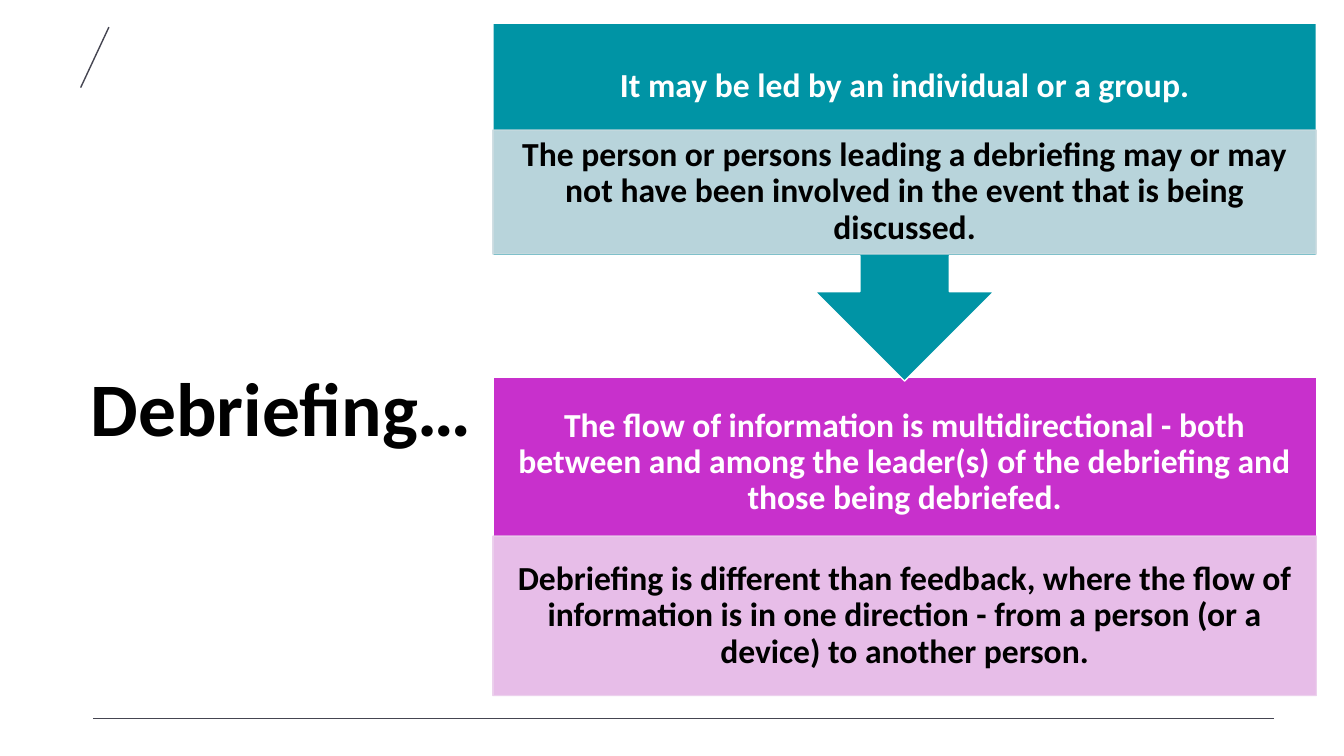
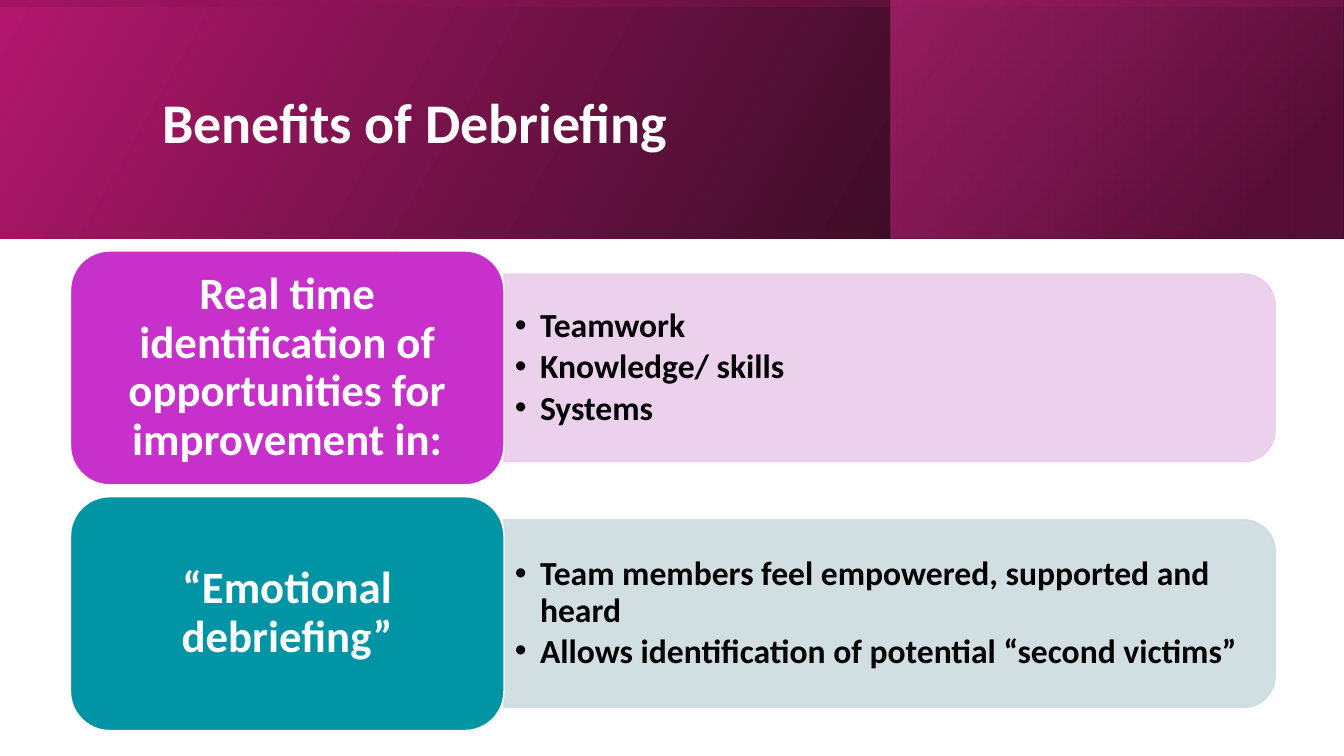
from dataclasses import dataclass

from lxml.etree import SubElement
from pptx import Presentation
from pptx.dml.color import RGBColor
from pptx.enum.shapes import MSO_CONNECTOR, MSO_SHAPE
from pptx.enum.text import MSO_ANCHOR, MSO_AUTO_SIZE, PP_ALIGN
from pptx.oxml import parse_xml
from pptx.oxml.ns import nsdecls, qn
from pptx.util import Pt


@dataclass(frozen=True)
class Theme:
    font: str = "Calibri"
    white: str = "FFFFFF"
    black: str = "000000"
    rule: str = "454551"
    magenta: str = "C830CC"
    pale_magenta: str = "EBCDEC"
    teal: str = "0094A5"
    pale_teal: str = "CCDCE1"
    band_pink: str = "B4186E"
    band_plum: str = "781049"
    band_rose: str = "E32D91"
    big_title: int = 54
    title: int = 40
    card: int = 32
    body: int = 24


T = Theme()
WIDTH, HEIGHT = 960, 540

# Content
FLOW_TITLE = "Debriefing…"
# preset, top, height, fill, heading height, heading, panel top, panel height, panel fill, panel text
FLOW = [
    (MSO_SHAPE.RECTANGLE, 269.3, 227.5, T.magenta, 122.4,
     "The flow of information is multidirectional - both between and among "
     "the leader(s) of the debriefing and those being debriefed.",
     383, 113.8, T.pale_magenta,
     "Debriefing is different than feedback, where the flow of information "
     "is in one direction - from a person (or a device) to another person."),
    (MSO_SHAPE.DOWN_ARROW_CALLOUT, 16.6, 255.6, T.teal, 90,
     "It may be led by an individual or a group.",
     92.9, 88.6, T.pale_teal,
     "The person or persons leading a debriefing may or may not have been "
     "involved in the event that is being discussed."),
]
RULES = [(77.8, 19.4, 57.6, 62.6), (910, 513.4, 66.2, 513.4)]

BENEFITS_TITLE = "Benefits of Debriefing"
BENEFITS = [
    ("Real time identification of opportunities for improvement in:",
     ["Teamwork", "Knowledge/ skills", "Systems"], T.magenta, T.pale_magenta),
    ("“Emotional debriefing”",
     ["Team members feel empowered, supported and heard",
      "Allows identification of potential “second victims”"],
     T.teal, T.pale_teal),
]
BAND_H = 170.6
# box, rotation, angle, stops (position, colour, opacity)
BAND = [
    ((0, 0, WIDTH, BAND_H), 0, 330,
     [(0, T.black, 96), (100, T.band_pink, 100)]),
    ((636.5, 0, WIDTH - 636.5, BAND_H), 0, 320,
     [(19, T.band_plum, 68), (100, T.band_rose, 48)]),
    (((WIDTH - BAND_H) / 2, (BAND_H - WIDTH) / 2, BAND_H, WIDTH), 270, 350,
     [(23, T.band_pink, 16), (99, T.black, 45)]),
]


def rgb(colour):
    return RGBColor.from_string(colour)


def add_box(s, preset, box, fill, line=None, opacity=100):
    sp = s.shapes.add_shape(preset, *map(Pt, box))
    sp.shadow.inherit = False
    sp.fill.solid()
    sp.fill.fore_color.rgb = rgb(fill)
    if line:
        sp.line.color.rgb = rgb(line)
        sp.line.width = Pt(1)
    else:
        sp.line.fill.background()
    if opacity < 100:
        for clr in sp.element.spPr.iter(qn("a:srgbClr")):
            SubElement(clr, qn("a:alpha")).set("val", str(opacity * 1000))
    return sp


def write(sp, lines, size, colour, align=PP_ALIGN.CENTER,
          insets=(7.2, 3.6, 7.2, 3.6), bullets=False):
    tf = sp.text_frame
    tf.word_wrap = True
    tf.auto_size = MSO_AUTO_SIZE.NONE
    tf.vertical_anchor = MSO_ANCHOR.MIDDLE
    tf.margin_left, tf.margin_top, tf.margin_right, tf.margin_bottom = map(Pt, insets)
    for i, line in enumerate(lines):
        p = tf.add_paragraph() if i else tf.paragraphs[0]
        p.alignment = align
        p.line_spacing = 0.9
        if bullets:
            p.space_after = Pt(3.6)
            pPr = p._p.get_or_add_pPr()
            pPr.set("marL", str(Pt(18)))
            pPr.set("indent", str(-Pt(18)))
            SubElement(pPr, qn("a:buFont")).set("typeface", "Arial")
            SubElement(pPr, qn("a:buChar")).set("char", "•")
        r = p.add_run()
        r.text = line
        r.font.name, r.font.size, r.font.bold = T.font, Pt(size), True
        r.font.color.rgb = rgb(colour)


def set_title(s, text, box, size, colour):
    title = s.shapes.title
    title.left, title.top, title.width, title.height = map(Pt, box)
    write(title, [text], size, colour, PP_ALIGN.LEFT)
    # Bring the title in front of what is drawn so far
    title.element.getparent().append(title.element)


def add_rule(s, ends):
    line = s.shapes.add_connector(MSO_CONNECTOR.STRAIGHT, *map(Pt, ends))
    line.line.color.rgb = rgb(T.rule)
    line.line.width = Pt(1)
    SubElement(line.element.spPr, qn("a:effectLst"))


def add_gradient_box(s, box, rotation, angle, stops):
    sp = add_box(s, MSO_SHAPE.RECTANGLE, box, T.black)
    sp.rotation = rotation
    spPr = sp.element.spPr
    spPr.find(qn("a:xfrm")).set("flipH", "1")
    stop_xml = "".join(
        f'<a:gs pos="{pos * 1000}"><a:srgbClr val="{colour}">'
        f'<a:alpha val="{opacity * 1000}"/></a:srgbClr></a:gs>'
        for pos, colour, opacity in stops)
    gradient = parse_xml(
        f'<a:gradFill {nsdecls("a")} rotWithShape="1"><a:gsLst>{stop_xml}</a:gsLst>'
        f'<a:lin ang="{angle * 60000}" scaled="0"/></a:gradFill>')
    spPr.replace(spPr.find(qn("a:solidFill")), gradient)


def build_flow(s):
    set_title(s, FLOW_TITLE, (57.6, 92.2, 383.8, 404.6), T.big_title, T.black)
    for ends in RULES:
        add_rule(s, ends)
    left, width, pad = 352.1, 588.2, 13.7
    for (preset, top, height, fill, head_h, heading,
         panel_top, panel_h, panel_fill, text) in FLOW:
        block = add_box(s, preset, (left, top, width, height), fill, T.white)
        # The callout's text area stops where its arrow starts
        is_callout = preset == MSO_SHAPE.DOWN_ARROW_CALLOUT
        text_h = height * block.adjustments[3] if is_callout else height
        write(block, [heading], T.body, T.white,
              insets=(pad, pad, pad, text_h - head_h + pad))
        panel = add_box(s, MSO_SHAPE.RECTANGLE, (left, panel_top, width, panel_h),
                        panel_fill, panel_fill, 90)
        write(panel, [text], T.body, T.black, insets=(pad, 2.2, pad, 2.2))


def build_benefits(s):
    for part in BAND:
        add_gradient_box(s, *part)
    set_title(s, BENEFITS_TITLE, (108.7, 27.4, 765.4, 123.8), T.title, T.white)
    left, top, card_w, card_h, gap = 50.4, 179.3, 309.6, 167, 8.5
    panel_w, panel_h = 550.8, 134
    panel_left = left + card_w
    for i, (heading, points, fill, pale) in enumerate(BENEFITS):
        y = top + i * (card_h + gap)
        middle = y + card_h / 2
        # Panel rounded on its right side: a turned shape, with upright text above it
        panel = add_box(s, MSO_SHAPE.ROUND_2_SAME_RECTANGLE,
                        (panel_left + (panel_w - panel_h) / 2, middle - panel_w / 2,
                         panel_h, panel_w), pale, pale, 90)
        panel.rotation = 90
        label = s.shapes.add_textbox(Pt(panel_left + 0.7), Pt(middle - 60.5),
                                     Pt(544.3), Pt(121))
        write(label, points, T.body, T.black, PP_ALIGN.LEFT, bullets=True)
        card = add_box(s, MSO_SHAPE.ROUNDED_RECTANGLE, (left, y, card_w, card_h),
                       fill, T.white)
        write(card, [heading], T.card, T.white, insets=(9.4, 5, 9.4, 5))


def main():
    prs = Presentation()
    prs.slide_width, prs.slide_height = Pt(WIDTH), Pt(HEIGHT)
    title_only = prs.slide_layouts[5]
    for build in (build_flow, build_benefits):
        build(prs.slides.add_slide(title_only))
    prs.save("out.pptx")


if __name__ == "__main__":
    main()
